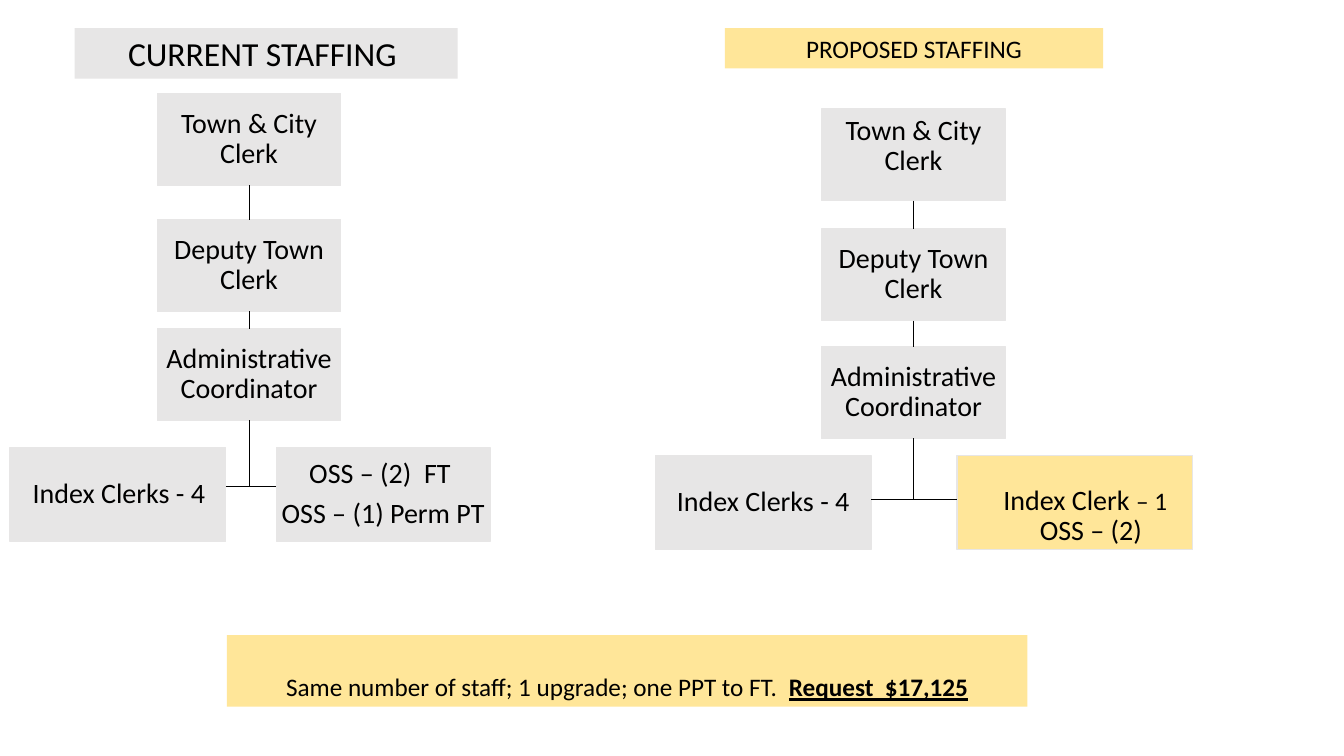
from itertools import pairwise
from lxml.etree import SubElement
from pptx import Presentation
from pptx.dml.color import RGBColor
from pptx.enum.shapes import MSO_CONNECTOR, MSO_SHAPE
from pptx.enum.text import MSO_ANCHOR, PP_ALIGN
from pptx.oxml.ns import qn
from pptx.util import Inches, Pt

GREY, GOLD, BLACK = "E7E6E6", "FFE699", "000000"
POST_W, POST_H, TEAM_H = 1.82, 0.91, 0.93
POSTS = ["Town & City Clerk", "Deputy Town Clerk", "Administrative Coordinator"]
POST = {"size": 20, "line": GREY, "spacing": 0.9, "after": 7, "pad": (0.02,) * 4}
TEAM = POST | {"pad": (0.01,) * 4}
UPGRADE = POST | {"fill": GOLD, "after": 0, "anchor": MSO_ANCHOR.BOTTOM,
                  "pad": (0.32, 0, 0, 0.03)}
INDEX_CLERKS = [[("Index Clerks - 4", {})]]

BANNERS = [
    ((0.74, 0.28, 3.8, 0.5), [[("CURRENT STAFFING ", {})]], {"size": 24}),
    ((7.19, 0.28, 3.75, 0.4), [[("PROPOSED STAFFING", {})]], {"fill": GOLD}),
    ((2.25, 6.3, 7.94, 0.71),
     [[("Same number of staff; 1 upgrade; one PPT to FT.  ", {}),
       ("Request  $17,125", {"bold": True, "underline": True})]],
     {"fill": GOLD, "anchor": MSO_ANCHOR.BOTTOM}),
]

CHARTS = [
    {"trunk": 2.47, "tops": (0.93, 2.18, 3.26), "bar": 4.83, "team_top": 4.44,
     "head_pad": (0.02,) * 4,
     "teams": [
         (0.1, 2.14, INDEX_CLERKS, TEAM | {"pad": (0.03, 0.01, 0.01, 0.01)}),
         (2.74, 2.12, [[("OSS – (2)  FT ", {})], [("OSS – (1) Perm PT", {})]], TEAM)]},
    {"trunk": 9.06, "tops": (1.08, 2.27, 3.44), "bar": 4.95, "team_top": 4.52,
     "head_pad": (0.02, 0.02, 0.02, 0.18),
     "teams": [
         (6.5, 2.14, INDEX_CLERKS, TEAM),
         (9.49, 2.34, [[("Index Clerk ", {}), ("– 1  ", {"size": Pt(18)})],
                       [("OSS – (2)", {})]], UPGRADE)]},
]


def color(value):
    return RGBColor.from_string(value)


def add_box(s, at, paragraphs, style):
    sp = s.shapes.add_shape(MSO_SHAPE.RECTANGLE, *map(Inches, at))
    sp.shadow.inherit = False
    sp.fill.solid()
    sp.fill.fore_color.rgb = color(style.get("fill", GREY))
    if "line" in style:
        sp.line.color.rgb = color(style["line"])
        sp.line.width = Pt(1)
    else:
        sp.line.fill.background()
    tf = sp.text_frame
    tf.word_wrap = True
    tf.vertical_anchor = style.get("anchor", MSO_ANCHOR.MIDDLE)
    for side, pad in zip(("left", "top", "right", "bottom"),
                         style.get("pad", (0.1, 0.05, 0.1, 0.05))):
        setattr(tf, f"margin_{side}", Inches(pad))
    for i, runs in enumerate(paragraphs):
        p = tf.add_paragraph() if i else tf.paragraphs[0]
        p.alignment = PP_ALIGN.CENTER
        p.line_spacing = style.get("spacing", 1.0)
        p.space_after = Pt(style.get("after", 0))
        for text, extra in runs:
            r = p.add_run()
            r.text = text
            r.font.color.rgb = color(BLACK)
            font = {"name": "Calibri", "size": Pt(style.get("size", 18))} | extra
            for name, value in font.items():
                setattr(r.font, name, value)
    return sp


def add_line(s, x1, y1, x2, y2):
    line = s.shapes.add_connector(MSO_CONNECTOR.STRAIGHT,
                                  *map(Inches, (x1, y1, x2, y2)))
    line.line.color.rgb = color(BLACK)
    line.line.width = Pt(0.5)
    SubElement(line._element.spPr, qn("a:effectLst"))
    return line


def add_chart_tree(s, chart):
    x, bar = chart["trunk"], chart["bar"]
    pads = (chart["head_pad"], POST["pad"], POST["pad"])
    posts = [add_box(s, (x - POST_W / 2, top, POST_W, POST_H),
                     [[(title, {})]], POST | {"pad": pad})
             for title, top, pad in zip(POSTS, chart["tops"], pads)]
    for upper, lower in pairwise(posts):
        line = add_line(s, x, 0, x, 1)
        line.begin_connect(upper, 2)
        line.end_connect(lower, 0)
    add_line(s, x, chart["tops"][-1] + POST_H, x, bar).begin_connect(posts[-1], 2)
    for left, width, paragraphs, style in chart["teams"]:
        add_box(s, (left, chart["team_top"], width, TEAM_H), paragraphs, style)
    (left, width, *_), (right, *_) = chart["teams"]
    add_line(s, left + width, bar, right, bar)


def main():
    prs = Presentation()
    prs.slide_width, prs.slide_height = Inches(13.33), Inches(7.5)
    s = prs.slides.add_slide(prs.slide_layouts[6])
    for at, paragraphs, style in BANNERS:
        add_box(s, at, paragraphs, style)
    for chart in CHARTS:
        add_chart_tree(s, chart)
    prs.save("out.pptx")


if __name__ == "__main__":
    main()
